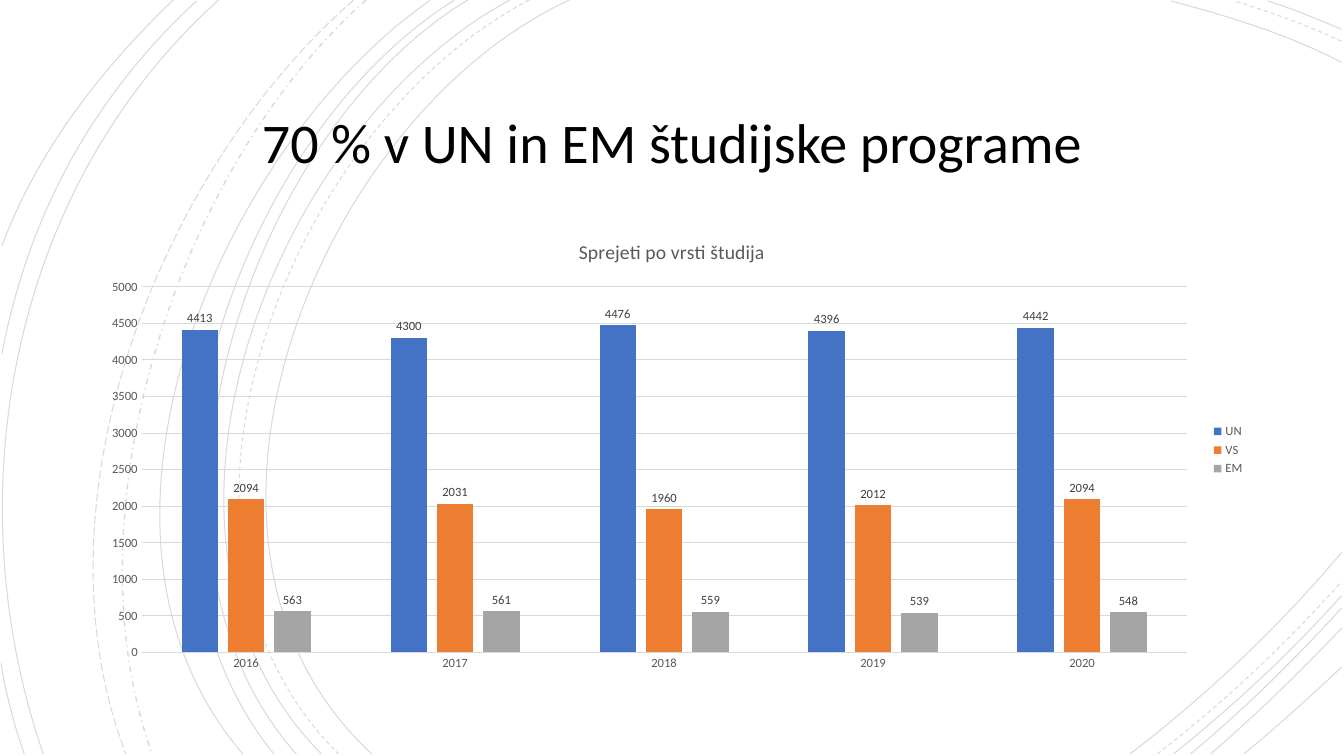
from lxml.etree import SubElement
from pptx import Presentation
from pptx.chart.data import CategoryChartData
from pptx.dml.color import RGBColor
from pptx.enum.chart import XL_CHART_TYPE, XL_LABEL_POSITION, XL_LEGEND_POSITION, XL_TICK_MARK
from pptx.enum.dml import MSO_LINE
from pptx.enum.text import MSO_ANCHOR, PP_ALIGN
from pptx.oxml.ns import qn
from pptx.util import Pt

BLACK = RGBColor(0x00, 0x00, 0x00)
TEXT_GREY = RGBColor(0x59, 0x59, 0x59)
LABEL_GREY = RGBColor(0x40, 0x40, 0x40)
GRID_GREY = RGBColor(0xD9, 0xD9, 0xD9)
BLUE = RGBColor(0x44, 0x72, 0xC4)
ORANGE = RGBColor(0xED, 0x7D, 0x31)
GREY = RGBColor(0xA5, 0xA5, 0xA5)
FONT = "Calibri"
SOLID, DASH = MSO_LINE.SOLID, MSO_LINE.DASH
BOTTOM = 538.6  # lower end of the arcs
RIGHT = 958.3  # right end of the corner arcs


def set_font(font, size, color):
    font.name = FONT
    font.size = Pt(size)
    font.bold = False
    font.color.rgb = color


def add_arc(shapes, points, dash, width=0.75):
    """Draw one cubic curve: start, two control points, end."""
    corners = [(Pt(x), Pt(y)) for x, y in points]
    builder = shapes.build_freeform(*corners[0], scale=1.0)
    builder.add_line_segments(corners[1:], close=False)
    arc = builder.convert_to_shape()
    arc.shadow.inherit = False
    arc.fill.background()
    arc.line.color.rgb = BLACK
    arc.line.width = Pt(width)
    arc.line.dash_style = dash
    color = next(arc.line._get_or_add_ln().iter(qn("a:srgbClr")))
    SubElement(color, qn("a:alpha"), val="15000")
    # The three straight segments become one Bézier segment
    outline = next(arc.element.iter(qn("a:path")))
    curve = SubElement(outline, qn("a:cubicBezTo"))
    for segment in outline.findall(qn("a:lnTo")):
        curve.append(segment[0])
        outline.remove(segment)


presentation = Presentation()
presentation.slide_width = Pt(960)
presentation.slide_height = Pt(540)
slide = presentation.slides.add_slide(presentation.slide_layouts[6])

# Background arcs
arcs = slide.shapes.add_group_shape().shapes

# Start x, first control point, second control point, end x
tall_arcs = [
    (406.8, (226.8, 82.8), (103, 388.8), 265.7, SOLID, 0.75),
    (378, (205.2, 90), (88.6, 386.6), 241.9, DASH, 0.75),
    (364.3, (194.4, 91.4), (79.2, 386.6), 229.7, SOLID, 0.75),
    (334.1, (175.7, 95.8), (79.2, 389.5), 211.7, SOLID, 0.75),
    (324.7, (166.3, 99.4), (69.8, 383.8), 195.8, SOLID, 0.75),
    (307.4, (156.2, 105.8), (38.2, 380.9), 173.5, SOLID, 0.75),
    (261.4, (126.7, 119.5), (46.8, 366.5), 108.7, MSO_LINE.DASH_DOT, 1),
    (252.7, (113, 121.7), (20.9, 359.3), 90, MSO_LINE.LONG_DASH, 0.75),
    (156.2, (7.9, 133.2), (-33.1, 352.8), 31, SOLID, 0.75),
]
for start, control_1, control_2, end, dash, width in tall_arcs:
    add_arc(arcs, [(start, 0), control_1, control_2, (end, BOTTOM)], dash, width)

corner_arcs = [
    # Left edge
    ([(140.4, 0.7), (66.2, 69.1), (20.2, 154.1), (1.4, 252.7)], SOLID),
    ([(0.7, 473.8), (4.3, 496.1), (10.1, 517.7), (17.3, BOTTOM)], SOLID),
    ([(123.8, 0), (72, 49.7), (26.6, 108), (1.4, 175.7)], SOLID),
    # Top right
    ([(RIGHT, 44.6), (920.2, 24.5), (877, 11.5), (836.6, 0.7)], SOLID),
    ([(RIGHT, 29.5), (933.8, 18), (907.2, 8.6), (882, 0.7)], DASH),
    ([(RIGHT, 20.9), (941, 13.7), (923.8, 6.5), (905.8, 0.7)], SOLID),
    # Bottom right
    ([(807.1, BOTTOM), (861.8, 496.8), (913.7, 447.8), (RIGHT, 394.6)], SOLID),
    ([(826.6, BOTTOM), (873.4, 502.6), (918, 460.8), (RIGHT, 415.4)], DASH),
    ([(838.1, BOTTOM), (880.6, 504.7), (921.6, 466.6), (RIGHT, 425.5)], SOLID),
    ([(850.3, BOTTOM), (888.5, 506.9), (924.5, 471.6), (RIGHT, 434.2)], SOLID),
    ([(864.7, BOTTOM), (897.1, 510.5), (928.8, 480.2), (RIGHT, 448.6)], SOLID),
    ([(888.5, BOTTOM), (912.2, 519.1), (935.3, 498.2), (RIGHT, 476.6)], SOLID),
]
for points, dash in corner_arcs:
    add_arc(arcs, points, dash)

# Title
title = slide.shapes.add_textbox(Pt(138.2), Pt(62.6), Pt(683.3), Pt(82.8))
title.text_frame.word_wrap = True
title.text_frame.vertical_anchor = MSO_ANCHOR.MIDDLE
paragraph = title.text_frame.paragraphs[0]
paragraph.text = "70 % v UN in EM študijske programe"
paragraph.alignment = PP_ALIGN.CENTER
paragraph.line_spacing = 0.9
set_font(paragraph.runs[0].font, 40, BLACK)

# Chart
admissions = [
    ("UN", (4413, 4300, 4476, 4396, 4442), BLUE),
    ("VS", (2094, 2031, 1960, 2012, 2094), ORANGE),
    ("EM", (563, 561, 559, 539, 548), GREY),
]
chart_data = CategoryChartData()
chart_data.categories = ["2016", "2017", "2018", "2019", "2020"]
for name, values, color in admissions:
    chart_data.add_series(name, values)
chart = slide.shapes.add_chart(
    XL_CHART_TYPE.COLUMN_CLUSTERED, Pt(63.4), Pt(157), Pt(833), Pt(329), chart_data
).chart
set_font(chart.font, 10, BLACK)

chart.has_title = True
chart.chart_title.include_in_layout = False
chart.chart_title.text_frame.text = "Sprejeti po vrsti študija"
set_font(chart.chart_title.text_frame.paragraphs[0].runs[0].font, 14, TEXT_GREY)

chart.has_legend = True
chart.legend.position = XL_LEGEND_POSITION.RIGHT
chart.legend.include_in_layout = False
set_font(chart.legend.font, 9, TEXT_GREY)

for axis in (chart.category_axis, chart.value_axis):
    axis.major_tick_mark = XL_TICK_MARK.NONE
    axis.minor_tick_mark = XL_TICK_MARK.NONE
    set_font(axis.tick_labels.font, 9, TEXT_GREY)
chart.value_axis.minimum_scale = 0
chart.value_axis.maximum_scale = 5000
chart.value_axis.major_unit = 500
chart.value_axis.format.line.fill.background()
chart.value_axis.has_major_gridlines = True
for line in (chart.category_axis.format.line, chart.value_axis.major_gridlines.format.line):
    line.color.rgb = GRID_GREY
    line.width = Pt(0.75)

plot = chart.plots[0]
plot.gap_width = 219
plot.overlap = -27
plot.vary_by_categories = False
for series, (name, values, color) in zip(plot.series, admissions):
    series.format.fill.solid()
    series.format.fill.fore_color.rgb = color
    series.invert_if_negative = False
    labels = series.data_labels
    labels.show_value = True
    labels.position = XL_LABEL_POSITION.OUTSIDE_END
    set_font(labels.font, 9, LABEL_GREY)

presentation.save("out.pptx")
